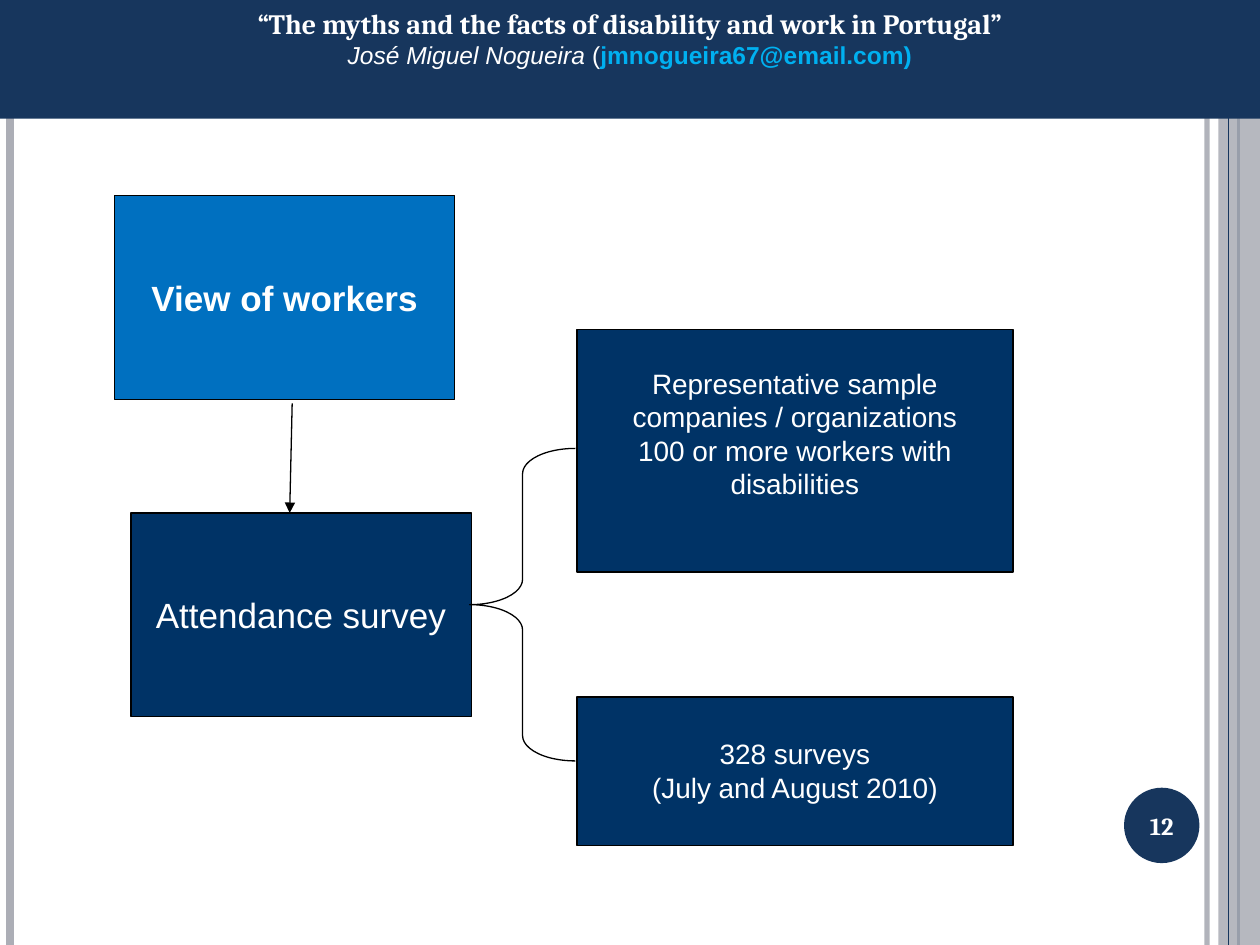
from collections import namedtuple

from lxml import etree
from pptx import Presentation
from pptx import util as u
from pptx.dml import color
from pptx.enum import shapes, text
from pptx.oxml import ns

COLORS = {
    "navy": "17365D",
    "deep": "003366",
    "blue": "0070C0",
    "sky": "00B0F0",
    "grey": "ACAEB6",
    "black": "000000",
    "white": "FFFFFF",
}
Box = namedtuple("Box", "left top width height")


def paint(target, name, alpha=None):
    target.solid()
    target.fore_color.rgb = color.RGBColor.from_string(COLORS[name])
    if alpha:
        tone = target._xPr.find(".//" + ns.qn("a:srgbClr"))
        etree.SubElement(tone, ns.qn("a:alpha"), val=str(alpha * 1000))


def write(para, words, size=16, font="Arial", tone="white", bold=False, italic=False):
    para.alignment = text.PP_ALIGN.CENTER
    span = para.add_run()
    span.text = words
    span.font.size = u.Pt(size)
    span.font.name = font
    span.font.bold = bold
    span.font.italic = italic
    span.font.color.rgb = color.RGBColor.from_string(COLORS[tone])


def add_block(page, kind, box, fill=None, line=None, alpha=None):
    block = page.shapes.add_shape(kind, *map(u.Cm, box))
    block.shadow.inherit = False
    if fill:
        paint(block.fill, fill, alpha)
    else:
        block.fill.background()
    if line:
        paint(block.line.fill, line)
        block.line.width = u.Pt(0.75)
    else:
        block.line.fill.background()
    return block


def add_line(page, start, end, tone, width, alpha=None, arrow=False):
    line = page.shapes.add_connector(
        shapes.MSO_CONNECTOR.STRAIGHT, *map(u.Cm, (*start, *end)))
    paint(line.line.fill, tone, alpha)
    line.line.width = u.Pt(width)
    if arrow:
        etree.SubElement(line.line._get_or_add_ln(), ns.qn("a:tailEnd"), type="triangle")
    etree.SubElement(line._element.spPr, ns.qn("a:effectLst"))


def fill_text(block, lines, top=None, **style):
    frame = block.text_frame
    frame.word_wrap = True
    frame.margin_left = frame.margin_right = frame.margin_bottom = 0
    frame.margin_top = u.Cm(top or 0)
    frame.vertical_anchor = text.MSO_ANCHOR.TOP if top else text.MSO_ANCHOR.MIDDLE
    for index, words in enumerate(lines):
        para = frame.add_paragraph() if index else frame.paragraphs[0]
        write(para, words, **style)


def draw_side_bars(page, box):
    def bar(left, tone, width, alpha=None):
        x = box.left + left
        add_line(page, (x, box.top), (x, box.top + box.height), tone, width, alpha)

    bar(24.33, "grey", 3, 93)
    bar(0.2, "grey", 4.5)
    bar(24.97, "navy", 1.5)
    band = Box(box.left + 24.56, box.top, 0.84, box.height)
    add_block(page, shapes.MSO_SHAPE.RECTANGLE, band, "grey", alpha=87)
    bar(24.77, "navy", 0.75)


def draw_page_number(page, box, number):
    disc = add_block(page, shapes.MSO_SHAPE.OVAL, box, "navy")
    fill_text(disc, [number], size=14, font="Cambria", bold=True)


def draw_survey_diagram(page, box):
    def place(left, top, width, height):
        return Box(box.left + left, box.top + top, width, height)

    wide, narrow, tall = 8.79, 6.86, 4.11
    right = box.width - wide
    cards = [
        (place(0, 0, narrow, tall), "blue", ["View of workers"],
         dict(size=20, bold=True)),
        (place(0.33, 6.4, narrow, tall), "deep", ["Attendance survey"],
         dict(size=20)),
        (place(right, 2.71, wide, 4.88), "deep",
         ["Representative sample", "companies / organizations",
          "100 or more workers with", "disabilities"], dict(top=0.73)),
        (place(right, 10.11, wide, 3), "deep",
         ["328 surveys", "(July and August 2010)"], dict(top=0.8)),
    ]
    for spot, fill, lines, style in cards:
        card = add_block(page, shapes.MSO_SHAPE.RECTANGLE, spot, fill, "black")
        fill_text(card, lines, **style)

    brace = add_block(page, shapes.MSO_SHAPE.LEFT_BRACE,
                      place(7.16, 5.1, 2.13, 6.3), line="black")
    brace.adjustments[0] = 0.24
    add_line(page, place(3.58, 4.19, 0, 0)[:2], place(3.53, 6.4, 0, 0)[:2],
             "black", 0.75, arrow=True)


def draw_header(page, box):
    title = page.shapes.title
    title.left, title.top, title.width, title.height = map(u.Cm, box)
    paint(title.fill, "navy")
    frame = title.text_frame
    frame.auto_size = text.MSO_AUTO_SIZE.NONE
    frame.vertical_anchor = text.MSO_ANCHOR.TOP
    write(frame.paragraphs[0],
          "“The myths and the facts of disability and work in Portugal”",
          font="Cambria", bold=True)
    author = frame.add_paragraph()
    write(author, "José Miguel Nogueira ", size=14, italic=True)
    write(author, "(", size=14)
    write(author, "jmnogueira67@email.com)", size=14, tone="sky", bold=True)
    page.shapes._spTree.append(title._element)


def main():
    deck = Presentation()
    deck.slide_width, deck.slide_height = u.Cm(25.4), u.Cm(19.05)
    page = deck.slides.add_slide(deck.slide_layouts[5])
    draw_side_bars(page, Box(0, 0, 25.4, 19.05))
    draw_page_number(page, Box(22.66, 15.88, 1.52, 1.52), "12")
    draw_survey_diagram(page, Box(2.31, 3.94, 18.11, 13.11))
    draw_header(page, Box(0, 0, 25.4, 2.39))
    deck.save("out.pptx")


if __name__ == "__main__":
    main()
